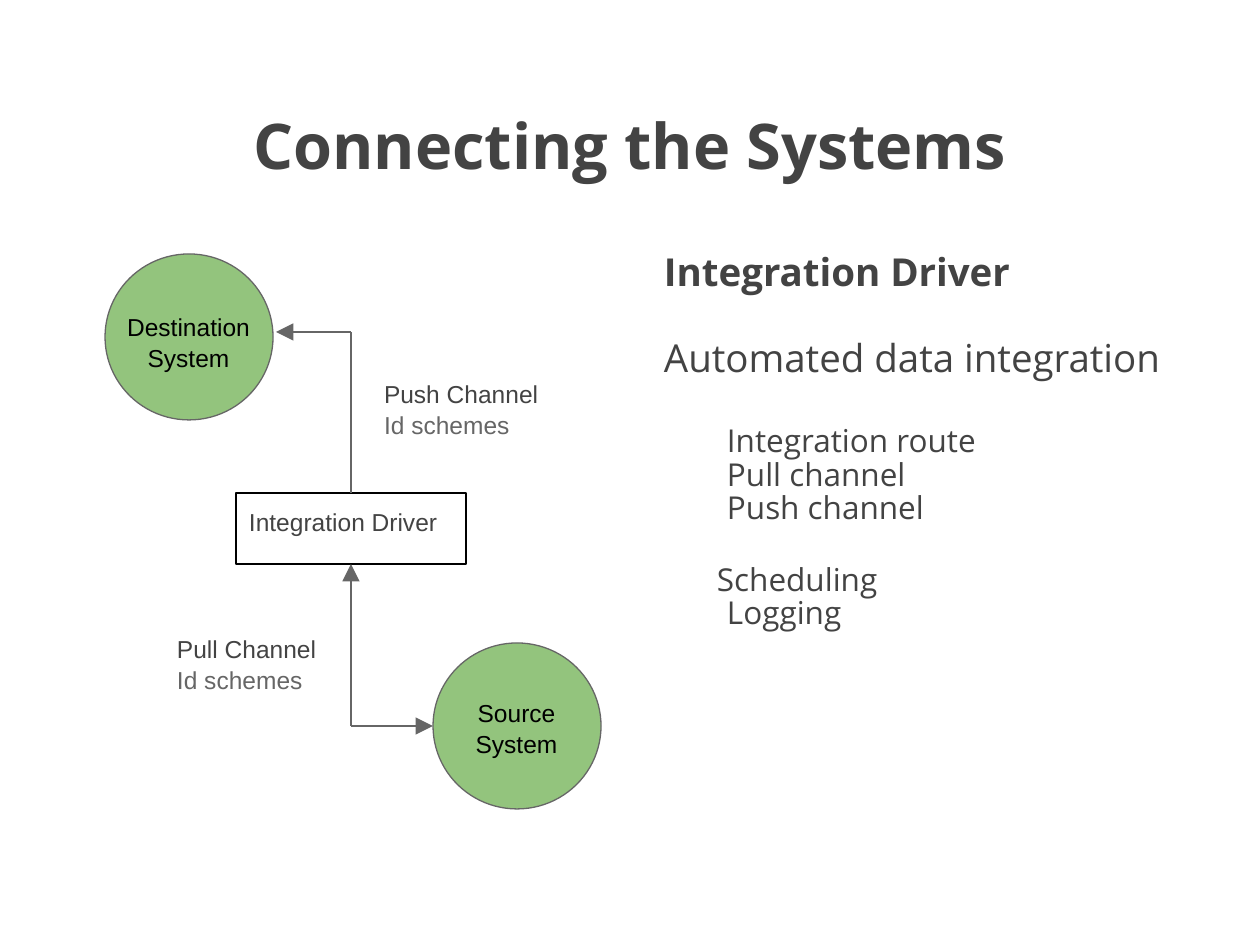
import pptx
import pptx.util
import pptx.dml.color
import pptx.enum.shapes
import pptx.enum.text
import pptx.oxml.ns
from dataclasses import dataclass
from lxml import etree

PX = 914400 / 126
SHAPE = pptx.enum.shapes.MSO_SHAPE
ALIGN = pptx.enum.text.PP_ALIGN
ANCHOR = pptx.enum.text.MSO_ANCHOR
qn = pptx.oxml.ns.qn


def emu(px):
    return pptx.util.Emu(round(px * PX))


def rgb(value):
    return pptx.dml.color.RGBColor.from_string(value)


@dataclass
class Theme:
    head_font: str = "Open Sans"
    label_font: str = "Arial"
    dark: str = "434343"
    grey: str = "666666"
    black: str = "000000"
    green: str = "93C47D"
    title: int = 36
    lead: int = 22
    item: int = 18
    label: int = 14
    line: float = 0.75
    inset: int = 13
    body_spacing: float = 0.88
    label_spacing: float = 1.05


class Slide:
    def __init__(self, prs, theme):
        self.t = theme
        self.s = prs.slides.add_slide(prs.slide_layouts[1])

    def place(self, sp, x, y, w, h):
        sp.left, sp.top, sp.width, sp.height = map(emu, (x, y, w, h))

    def frame(self, sp, anchor=ANCHOR.TOP):
        tf = sp.text_frame
        tf.word_wrap = True
        tf.auto_size = pptx.enum.text.MSO_AUTO_SIZE.NONE
        tf.vertical_anchor = anchor
        tf.margin_left = tf.margin_right = emu(self.t.inset)
        tf.margin_top = tf.margin_bottom = emu(self.t.inset)
        return tf

    def paragraph(self, tf, first, align=ALIGN.LEFT, spacing=1.0, before=0):
        p = tf.paragraphs[0] if first else tf.add_paragraph()
        p.alignment = align
        p.line_spacing = spacing
        p.space_before = pptx.util.Pt(before)
        p.space_after = pptx.util.Pt(0)
        return p

    def run(self, p, text, size, color, font, bold=False):
        r = p.add_run()
        r.text = text
        r.font.size = pptx.util.Pt(size)
        r.font.name = font
        r.font.bold = bold
        r.font.color.rgb = rgb(color)

    def title(self, text, *box):
        sp = self.s.shapes.title
        self.place(sp, *box)
        p = self.paragraph(self.frame(sp, ANCHOR.BOTTOM), True, ALIGN.CENTER)
        self.run(p, text, self.t.title, self.t.dark, self.t.head_font, True)

    def body(self, items, *box):
        """Each item is text, size, bold, left margin, first-line indent, space before."""
        sp = self.s.placeholders[1]
        self.place(sp, *box)
        tf = self.frame(sp)
        for i, (text, size, bold, margin, indent, before) in enumerate(items):
            p = self.paragraph(tf, i == 0, spacing=self.t.body_spacing, before=before)
            pPr = p._p.get_or_add_pPr()
            pPr.set("marL", str(emu(margin)))
            pPr.set("indent", str(emu(indent)))
            etree.SubElement(pPr, qn("a:buNone"))
            self.run(p, text, size, self.t.dark, self.t.head_font, bold)

    def labels(self, sp, lines, align=ALIGN.LEFT):
        tf = self.frame(sp)
        for i, (text, color) in enumerate(lines):
            p = self.paragraph(tf, i == 0, align, self.t.label_spacing)
            self.run(p, text, self.t.label, color, self.t.label_font)

    def text(self, lines, x, y, w, h, align=ALIGN.LEFT):
        sp = self.s.shapes.add_textbox(*map(emu, (x, y, w, h)))
        self.labels(sp, lines, align)

    def shape(self, kind, line, fill, *box):
        sp = self.s.shapes.add_shape(kind, *map(emu, box))
        sp.shadow.inherit = False
        if fill:
            sp.fill.solid()
            sp.fill.fore_color.rgb = rgb(fill)
        else:
            sp.fill.background()
        sp.line.color.rgb = rgb(line)
        sp.line.width = pptx.util.Pt(self.t.line)
        return sp

    def system(self, lines, x, y, text_top):
        """A green circle with its name over it."""
        self.shape(SHAPE.OVAL, self.t.grey, self.t.green, x, y, 168, 166)
        self.text([(text, self.t.black) for text in lines],
                  x + 6, y + text_top, 155, 67, ALIGN.CENTER)

    def channel(self, name, *box):
        self.text([(name, self.t.dark), ("Id schemes", self.t.grey)], *box)

    def line(self, x1, y1, x2, y2, arrow=False):
        c = self.s.shapes.add_connector(pptx.enum.shapes.MSO_CONNECTOR.STRAIGHT,
                                        *map(emu, (x1, y1, x2, y2)))
        c.line.color.rgb = rgb(self.t.grey)
        c.line.width = pptx.util.Pt(self.t.line)
        if arrow:
            etree.SubElement(c.line._get_or_add_ln(), qn("a:tailEnd"),
                             type="triangle", w="lg", len="lg")
        etree.SubElement(c._element.spPr, qn("a:effectLst"))


def main():
    prs = pptx.Presentation()
    prs.slide_width, prs.slide_height = emu(1260), emu(945)
    t = Theme()
    slide = Slide(prs, t)

    # Title and list
    slide.title("Connecting the Systems", 63, 38, 1134, 157)
    slide.body([
        ("Integration Driver", t.lead, True, 0, 0, 0),
        ("Automated data integration", t.lead, False, 0, 0, 26),
        ("Integration route", t.item, False, 63, 0, 26),
        ("Pull channel", t.item, False, 63, 0, 0),
        ("Push channel", t.item, False, 63, 0, 0),
        ("Scheduling", t.item, False, 63, -10, 22),
        ("Logging", t.item, False, 63, 0, 0),
    ], 651, 241, 533, 607)

    # Systems and the driver between them
    slide.system(["Destination", "System"], 105, 254, 44)
    driver = slide.shape(SHAPE.RECTANGLE, t.black, None, 236, 493, 230, 71)
    slide.labels(driver, [("Integration Driver", t.dark)])
    slide.channel("Push Channel", 371, 365, 184, 82)
    slide.channel("Pull Channel", 164, 620, 168, 82)
    slide.system(["Source System"], 433, 643, 41)

    # Push and pull paths
    slide.line(351, 493, 351, 332)
    slide.line(351, 332, 276, 332, arrow=True)
    slide.line(351, 726, 351, 564, arrow=True)
    slide.line(351, 726, 433, 726, arrow=True)

    prs.save("out.pptx")


if __name__ == "__main__":
    main()
